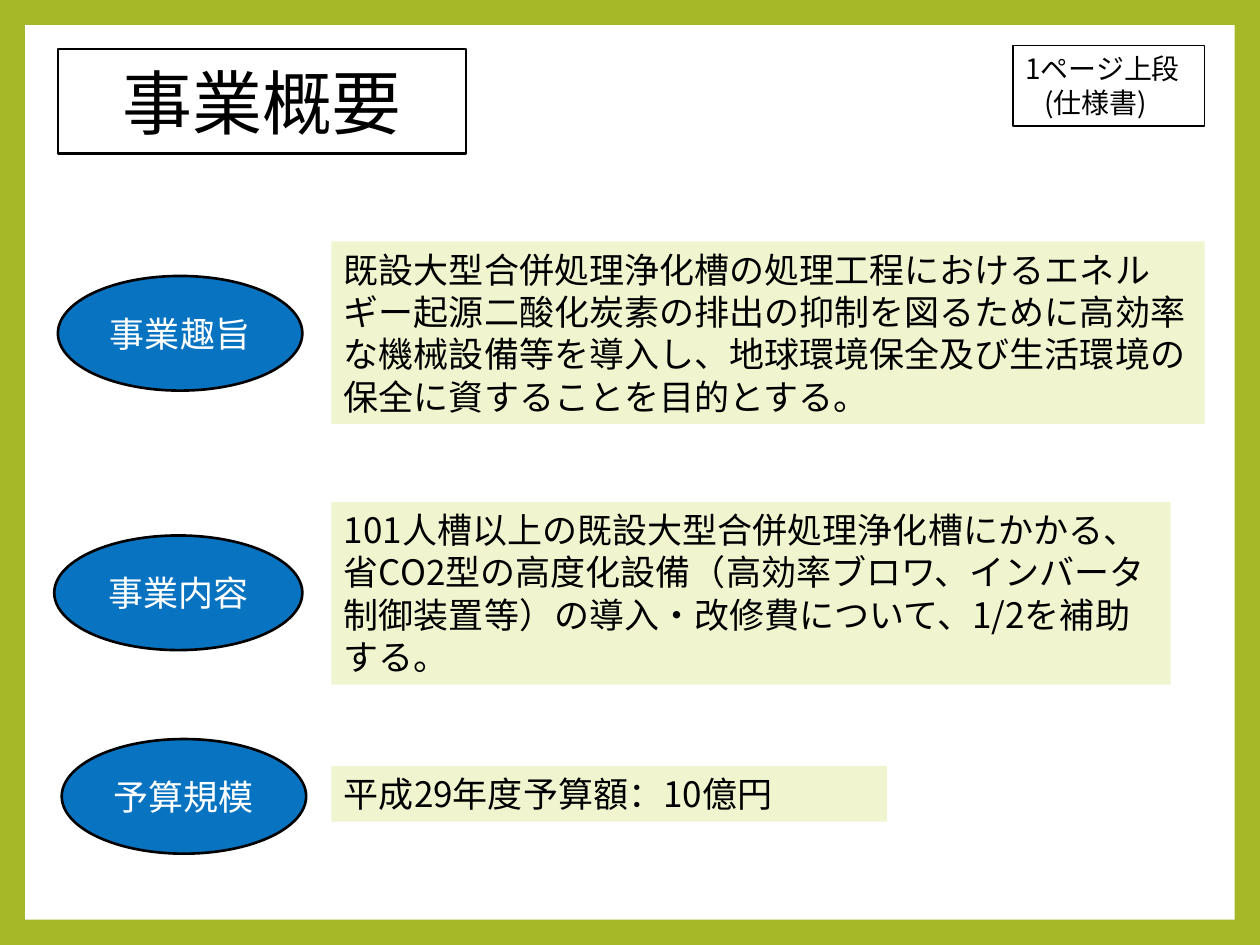
from dataclasses import dataclass

from lxml import etree
from pptx import Presentation
from pptx.dml.color import RGBColor
from pptx.enum.shapes import MSO_SHAPE
from pptx.enum.text import MSO_ANCHOR, MSO_AUTO_SIZE, PP_ALIGN
from pptx.oxml.ns import qn
from pptx.util import Pt

RECTANGLE, OVAL = MSO_SHAPE.RECTANGLE, MSO_SHAPE.OVAL
TOP, MIDDLE = MSO_ANCHOR.TOP, MSO_ANCHOR.MIDDLE
LEFT, CENTER = PP_ALIGN.LEFT, PP_ALIGN.CENTER
FIXED, GROW = MSO_AUTO_SIZE.NONE, MSO_AUTO_SIZE.SHAPE_TO_FIT_TEXT


@dataclass(frozen=True)
class Theme:
    font: str = "Noto Sans CJK JP"
    border: RGBColor = RGBColor(0xA6, 0xB7, 0x27)
    paper: RGBColor = RGBColor(0xFF, 0xFF, 0xFF)
    ink: RGBColor = RGBColor(0x00, 0x00, 0x00)
    topic: RGBColor = RGBColor(0x00, 0x70, 0xC0)
    panel: RGBColor = RGBColor(0xF0, 0xF5, 0xD0)
    topic_alpha: int = 97000
    title_size: int = 40
    body_size: int = 20
    note_size: int = 16
    line_height: float = 1.21


THEME = Theme()
SLIDE_WIDTH, SLIDE_HEIGHT = 720, 540
MARGIN = 14.4
PANEL_LEFT = 189.4

SECTIONS = [
    ("事業趣旨", (33.1, 157.7, 139.7, 65.5),
     "既設大型合併処理浄化槽の処理工程におけるエネルギー起源二酸化炭素の排出の抑制を図るために"
     "高効率な機械設備等を導入し、地球環境保全及び生活環境の保全に資することを目的とする。",
     (PANEL_LEFT, 138, 499, 104.4)),
    ("事業内容", (31, 306, 141.8, 65.5),
     "101人槽以上の既設大型合併処理浄化槽にかかる、省CO2型の高度化設備"
     "（高効率ブロワ、インバータ制御装置等）の導入・改修費について、1/2を補助する。",
     (PANEL_LEFT, 286.8, 479.5, 104.4)),
    ("予算規模", (35.3, 422.3, 139.7, 65.5),
     "平成29年度予算額：10億円",
     (PANEL_LEFT, 437.8, 317.5, 31.7)),
]


def add_box(slide, kind, box, fill=None, line_width=None):
    shape = slide.shapes.add_shape(kind, *map(Pt, box))
    shape.shadow.inherit = False
    paint(shape, fill, line_width)
    return shape


def paint(shape, fill, line_width):
    if fill is None:
        shape.fill.background()
    else:
        shape.fill.solid()
        shape.fill.fore_color.rgb = fill
    if line_width is None:
        shape.line.fill.background()
    else:
        shape.line.color.rgb = THEME.ink
        shape.line.width = Pt(line_width)


def write(shape, text, size, color, align, anchor, auto_size=FIXED):
    frame = shape.text_frame
    frame.text = text
    frame.word_wrap = True
    frame.auto_size = auto_size
    frame.vertical_anchor = anchor
    for paragraph in frame.paragraphs:
        paragraph.alignment = align
        if anchor == TOP:
            paragraph.line_spacing = Pt(size * THEME.line_height)
        for run in paragraph.runs:
            run.font.size = Pt(size)
            run.font.color.rgb = color
            run.font.name = THEME.font
            east_asian = etree.SubElement(run.font._element, qn("a:ea"))
            east_asian.set("typeface", THEME.font)


def place_background(slide):
    slide.background.fill.solid()
    slide.background.fill.fore_color.rgb = THEME.border
    box = (MARGIN, MARGIN, SLIDE_WIDTH - 2 * MARGIN, SLIDE_HEIGHT - 2 * MARGIN)
    paper = add_box(slide, RECTANGLE, box, THEME.paper)
    slide.shapes._spTree.insert(2, paper._element)


def place_title(slide, text, box):
    title = slide.shapes.title
    title.left, title.top, title.width, title.height = map(Pt, box)
    outline = etree.SubElement(title._element.spPr, qn("a:prstGeom"))
    outline.set("prst", "roundRect")
    etree.SubElement(outline, qn("a:avLst"))
    paint(title, THEME.paper, 1.5)
    write(title, text, THEME.title_size, THEME.ink, CENTER, MIDDLE)


def place_topic(slide, text, box):
    topic = add_box(slide, OVAL, box, THEME.topic, 1.5)
    color = topic._element.spPr.find(qn("a:solidFill"))[0]
    etree.SubElement(color, qn("a:alpha")).set("val", str(THEME.topic_alpha))
    write(topic, text, THEME.body_size, THEME.paper, CENTER, MIDDLE)


def place_panel(slide, text, box):
    panel = add_box(slide, RECTANGLE, box, THEME.panel)
    write(panel, text, THEME.body_size, THEME.ink, LEFT, TOP, GROW)


def place_page_note(slide, text, box):
    note = add_box(slide, RECTANGLE, box, line_width=0.75)
    write(note, text, THEME.note_size, THEME.ink, LEFT, TOP, GROW)
    source = note.text_frame.paragraphs[1]
    source._p.get_or_add_pPr().set("marL", str(Pt(10.8)))


def main():
    presentation = Presentation()
    presentation.slide_width = Pt(SLIDE_WIDTH)
    presentation.slide_height = Pt(SLIDE_HEIGHT)
    slide = presentation.slides.add_slide(presentation.slide_layouts[5])
    place_background(slide)
    place_title(slide, "事業概要", (33.1, 28.1, 233.3, 59.8))
    for topic, topic_box, description, panel_box in SECTIONS:
        place_topic(slide, topic, topic_box)
        place_panel(slide, description, panel_box)
    place_page_note(slide, "1ページ上段\n(仕様書)", (578.9, 25.9, 109.4, 46.1))
    presentation.save("out.pptx")


if __name__ == "__main__":
    main()
